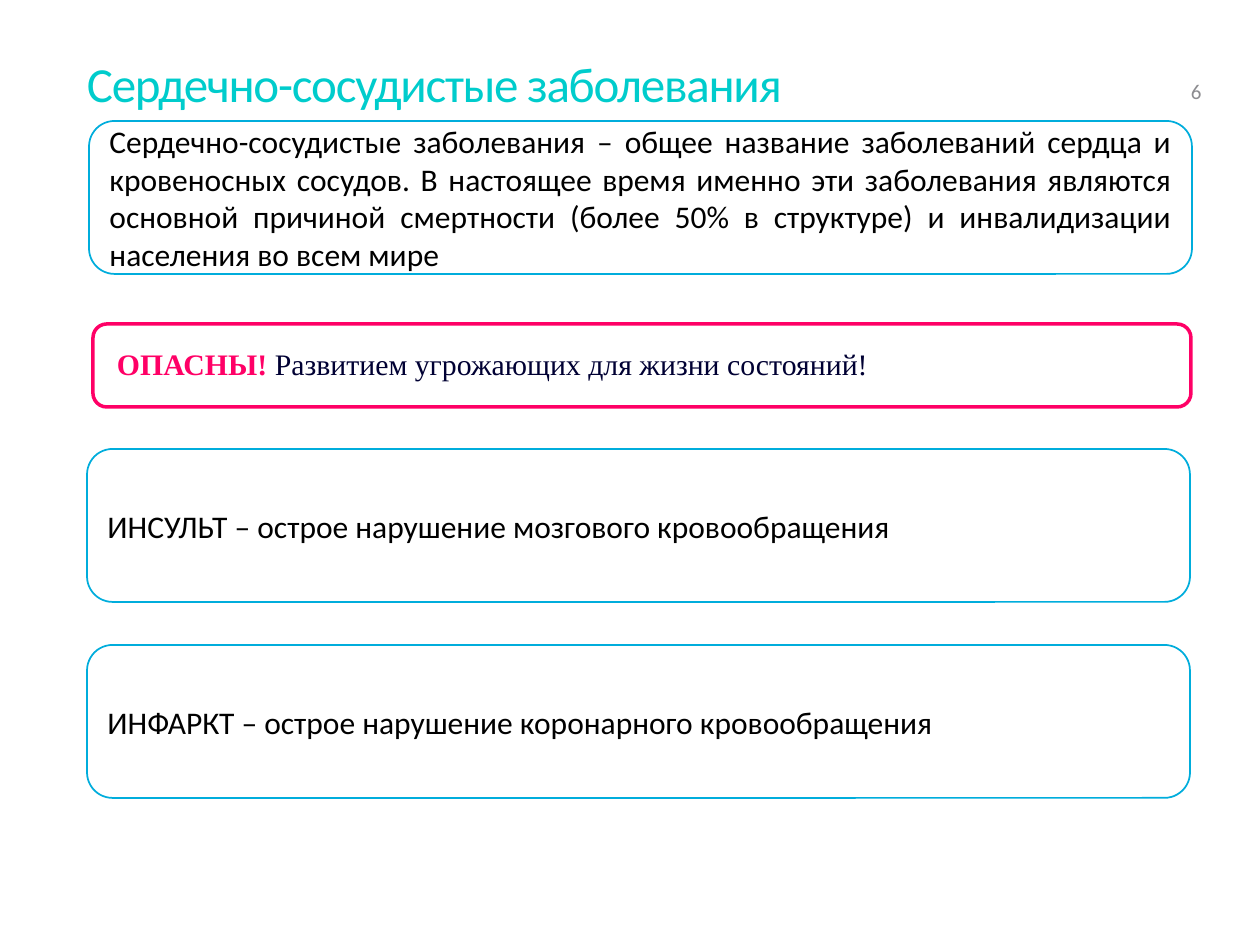
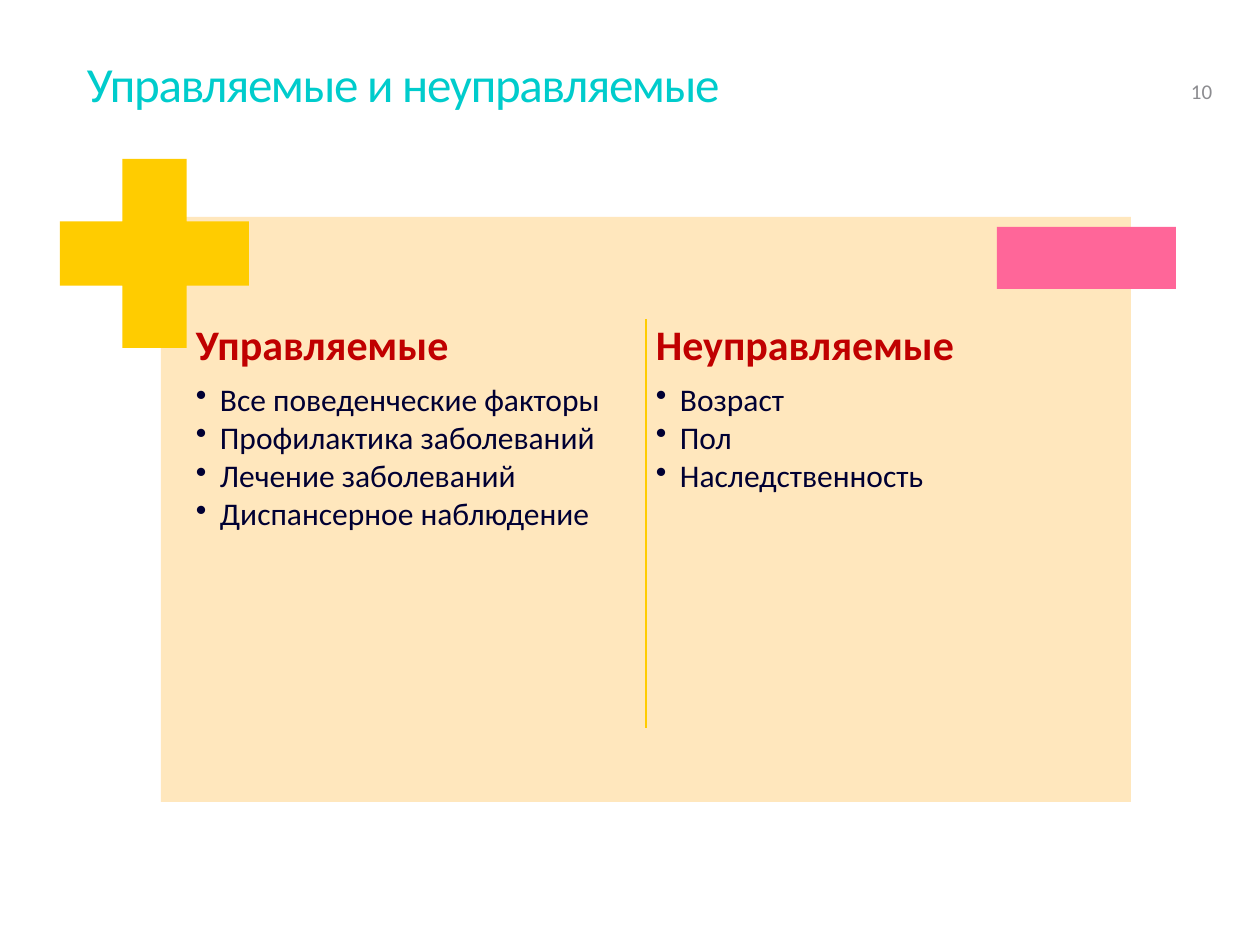
import pptx
import pptx.dml.color
import pptx.enum.shapes
import pptx.enum.text
import pptx.util
from lxml import etree
from pptx.oxml.ns import qn

RGBColor = pptx.dml.color.RGBColor
Shape = pptx.enum.shapes.MSO_SHAPE
Anchor = pptx.enum.text.MSO_ANCHOR
Align = pptx.enum.text.PP_ALIGN
Pt = pptx.util.Pt

TURQUOISE = RGBColor(0x00, 0xCC, 0xCC)
GRAY = RGBColor(0x8C, 0x8C, 0x90)
BLUE = RGBColor(0x00, 0xAD, 0xDC)
BLACK = RGBColor(0x00, 0x00, 0x00)
WHITE = RGBColor(0xFF, 0xFF, 0xFF)
CRIMSON = RGBColor(0xFF, 0x00, 0x66)
NAVY = RGBColor(0x00, 0x00, 0x33)
DARK_RED = RGBColor(0xC0, 0x00, 0x00)
CREAM = RGBColor(0xFF, 0xE7, 0xBD)
YELLOW = RGBColor(0xFF, 0xCC, 0x00)
PINK = RGBColor(0xFF, 0x66, 0x99)

SANS = "Calibri"
SERIF = "Times New Roman"
PX_PER_INCH = 126


def px(length):
    """Turn a length in px into EMU."""
    return round(length * pptx.util.Inches(1) / PX_PER_INCH)


def style(font, size, color, name=SANS, bold=False):
    """Set the look of a font."""
    font.size = Pt(size)
    font.color.rgb = color
    font.name = name
    font.bold = bold


def set_frame(frame, insets, anchor=Anchor.TOP):
    """Wrap the text and set its anchor and its side and vertical insets."""
    frame.word_wrap = True
    frame.vertical_anchor = anchor
    frame.margin_left = frame.margin_right = px(insets[0])
    frame.margin_top = frame.margin_bottom = px(insets[1])


def add_text(slide, box, insets, anchor=Anchor.TOP):
    """Add an empty text box and return its frame."""
    frame = slide.shapes.add_textbox(*map(px, box)).text_frame
    set_frame(frame, insets, anchor)
    return frame


def add_shape(slide, kind, box, fill=None, line=None, width=1):
    """Add a preset shape without a shadow."""
    shape = slide.shapes.add_shape(kind, *map(px, box))
    shape.shadow.inherit = False
    if fill is None:
        shape.fill.background()
    else:
        shape.fill.solid()
        shape.fill.fore_color.rgb = fill
    if line is None:
        shape.line.fill.background()
    else:
        shape.line.color.rgb = line
        shape.line.width = Pt(width)
    return shape


def add_slide(deck, title, number):
    """Add a blank slide with its title and page number."""
    slide = deck.slides.add_slide(deck.slide_layouts[6])
    heading = add_text(slide, (87, 50, 1086, 130), (0, 6)).paragraphs[0]
    heading.text = title
    heading.line_spacing = Pt(32)
    style(heading.runs[0].font, 28, TURQUOISE)
    heading.runs[0]._r.get_or_add_rPr().set("spc", "-70")
    page = add_text(slide, (1191, 50, 48, 59), (0, 5), Anchor.BOTTOM).paragraphs[0]
    page.text = str(number)
    style(page.runs[0].font, 12, GRAY)
    return slide


def add_definition(slide, box, text):
    """Add a blue rounded frame with a justified definition."""
    frame = add_shape(slide, Shape.ROUNDED_RECTANGLE, box, line=BLUE).text_frame
    set_frame(frame, (13, 6), Anchor.MIDDLE)
    paragraph = frame.paragraphs[0]
    paragraph.text = text
    paragraph.alignment = Align.JUSTIFY
    style(paragraph.runs[0].font, 18, BLACK)


def add_warning(slide, box, alert, message):
    """Add the warning frame with a bold alert before its message."""
    add_shape(slide, Shape.ROUNDED_RECTANGLE, box, WHITE, CRIMSON, 2)
    left, top, width, height = box
    frame = add_text(slide, (left + 8, top + 4, width - 16, height - 8),
                     (16, 9), Anchor.MIDDLE)
    paragraph = frame.paragraphs[0]
    paragraph.line_spacing = 0.9
    for text, color, bold in ((alert + " ", CRIMSON, True), (message, NAVY, False)):
        run = paragraph.add_run()
        run.text = text
        style(run.font, 17, color, SERIF, bold)


def add_bullet(paragraph, indent):
    """Give a paragraph a hanging bullet."""
    properties = paragraph._p.get_or_add_pPr()
    properties.set("marL", str(px(indent)))
    properties.set("indent", str(-px(indent)))
    etree.SubElement(properties, qn("a:buChar")).set("char", "•")


def add_factors(slide, box, heading, factors):
    """Add a column with a heading and its bulleted factors."""
    frame = add_text(slide, box, (6, 6))
    title = frame.paragraphs[0]
    title.text = heading
    title.line_spacing = 0.9
    title.space_after = Pt(8.4)
    style(title.runs[0].font, 24, DARK_RED, bold=True)
    for factor in factors:
        item = frame.add_paragraph()
        item.text = factor
        add_bullet(item, 24)
        item.line_spacing = 0.9
        item.space_after = Pt(2.4)
        style(item.runs[0].font, 18, NAVY)


def add_comparison(slide, box, columns):
    """Add the panel with two columns, the plus, the minus and the divider."""
    left, top, width, height = box
    add_shape(slide, Shape.RECTANGLE, box, CREAM)
    for index, (heading, factors) in enumerate(columns):
        add_factors(slide, (left + 29 + 460 * index, top + 101, 451, 428),
                    heading, factors)
    plus = add_shape(slide, Shape.CROSS, (left - 101, top - 58, 189, 189), YELLOW)
    plus.adjustments[0] = 0.33
    add_shape(slide, Shape.RECTANGLE, (left + width - 134, top + 10, 179, 62), PINK)
    middle = left + width // 2
    divider = slide.shapes.add_connector(
        pptx.enum.shapes.MSO_CONNECTOR.STRAIGHT,
        *map(px, (middle, top + 102, middle, top + 511)))
    divider.line.color.rgb = YELLOW
    divider.line.width = Pt(1)
    etree.SubElement(divider._element.spPr, qn("a:effectLst"))


def build_diseases(deck):
    """Build the slide on cardiovascular diseases."""
    slide = add_slide(deck, "Сердечно-сосудистые заболевания", 6)
    add_definition(
        slide, (89, 121, 1103, 153),
        "Сердечно-сосудистые заболевания – общее название заболеваний сердца и "
        "кровеносных сосудов. В настоящее время именно эти заболевания являются "
        "основной причиной смертности (более 50% в структуре) и инвалидизации "
        "населения во всем мире")
    add_warning(slide, (93, 324, 1098, 83), "ОПАСНЫ!",
                "Развитием угрожающих для жизни состояний!")
    states = ("ИНСУЛЬТ – острое нарушение мозгового кровообращения",
              "ИНФАРКТ – острое нарушение коронарного кровообращения")
    for index, state in enumerate(states):
        add_definition(slide, (87, 449 + 196 * index, 1103, 153), state)


def build_factors(deck):
    """Build the slide on manageable and unmanageable factors."""
    slide = add_slide(deck, "Управляемые и неуправляемые", 10)
    add_comparison(slide, (161, 217, 970, 585), (
        ("Управляемые", ("Все поведенческие факторы", "Профилактика заболеваний",
                         "Лечение заболеваний", "Диспансерное наблюдение")),
        ("Неуправляемые", ("Возраст", "Пол", "Наследственность"))))


def main():
    """Build and save the presentation."""
    deck = pptx.Presentation()
    deck.slide_width = px(1260)
    deck.slide_height = px(945)
    build_diseases(deck)
    build_factors(deck)
    deck.save("out.pptx")


if __name__ == "__main__":
    main()
